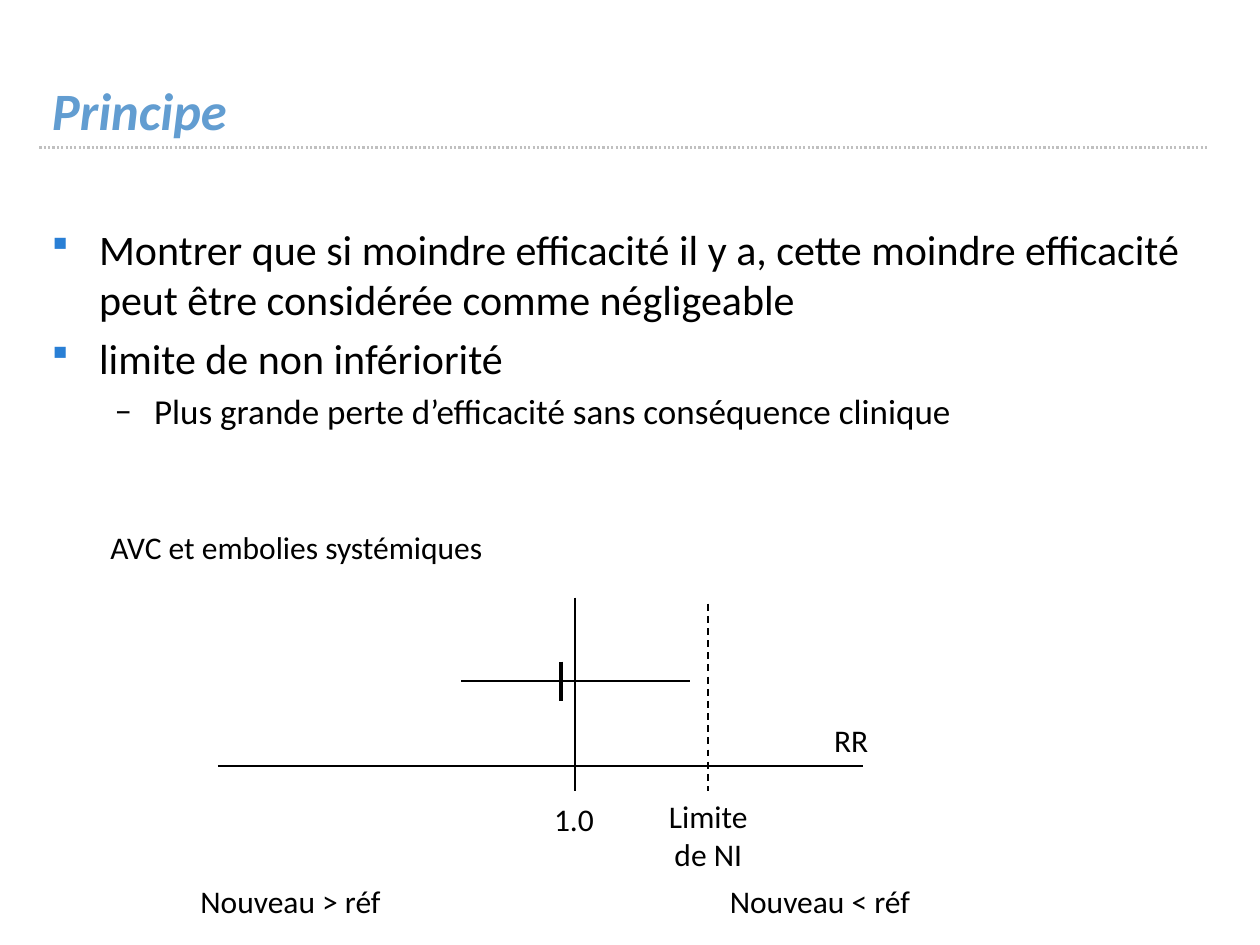
from dataclasses import dataclass

from lxml import etree
from pptx import Presentation
from pptx.dml.color import RGBColor
from pptx.enum import dml, shapes, text
from pptx.oxml import ns
from pptx.util import Pt


@dataclass(frozen=True)
class Theme:
    font: str = "Calibri"
    title_color: str = "629DD1"
    ink: str = "000000"
    rule: str = "C0C0C0"
    bullet: str = "297FD5"
    title_size: int = 30
    body_size: int = 24
    sub_size: int = 20
    label_size: int = 18


class SlideBuilder:
    def __init__(self, presentation, theme):
        self.theme = theme
        self.slide = presentation.slides.add_slide(presentation.slide_layouts[5])

    def format_runs(self, paragraph, size, color, bold=False, italic=False):
        for run in paragraph.runs:
            font = run.font
            font.name, font.size = self.theme.font, Pt(size)
            font.bold, font.italic = bold, italic
            font.color.rgb = RGBColor.from_string(color)

    def title(self, words, left, top, width, height):
        shape = self.slide.shapes.title
        shape.left, shape.top = Pt(left), Pt(top)
        shape.width, shape.height = Pt(width), Pt(height)
        frame = shape.text_frame
        frame.text = words
        frame.auto_size = text.MSO_AUTO_SIZE.NONE
        frame.vertical_anchor = text.MSO_ANCHOR.BOTTOM
        paragraph = frame.paragraphs[0]
        paragraph.alignment = text.PP_ALIGN.LEFT
        self.format_runs(paragraph, self.theme.title_size, self.theme.title_color, True, True)

    def line(self, start, end, width=1, color=None, dash=None):
        points = [Pt(value) for value in (*start, *end)]
        connector = self.slide.shapes.add_connector(shapes.MSO_CONNECTOR.STRAIGHT, *points)
        connector.line.color.rgb = RGBColor.from_string(color or self.theme.ink)
        connector.line.width = Pt(width)
        if dash is not None:
            connector.line.dash_style = dash
        etree.SubElement(connector._element.spPr, ns.qn("a:effectLst"))

    def label(self, words, left, top, width, height=29, centered=False):
        shape = self.slide.shapes.add_textbox(Pt(left), Pt(top), Pt(width), Pt(height))
        frame = shape.text_frame
        frame.text = words
        frame.word_wrap = centered
        frame.auto_size = text.MSO_AUTO_SIZE.SHAPE_TO_FIT_TEXT
        paragraph = frame.paragraphs[0]
        paragraph.alignment = text.PP_ALIGN.CENTER if centered else text.PP_ALIGN.LEFT
        self.format_runs(paragraph, self.theme.label_size, self.theme.ink)

    def bullet(self, paragraph, level):
        properties = paragraph._p.get_or_add_pPr()
        margin, indent = ((27, -27), (58.5, -22.5))[level]
        properties.set("marL", str(Pt(margin)))
        properties.set("indent", str(Pt(indent)))
        if level == 0:
            color = etree.SubElement(properties, ns.qn("a:buClr"))
            etree.SubElement(color, ns.qn("a:srgbClr"), val=self.theme.bullet)
            etree.SubElement(properties, ns.qn("a:buSzPct"), val="90000")
        font, character = (("Wingdings", "§"), (self.theme.font, "–"))[level]
        etree.SubElement(properties, ns.qn("a:buFont"), typeface=font)
        etree.SubElement(properties, ns.qn("a:buChar"), char=character)

    def bullets(self, items, left, top, width, height):
        shape = self.slide.shapes.add_textbox(Pt(left), Pt(top), Pt(width), Pt(height))
        frame = shape.text_frame
        frame.word_wrap = True
        frame.text = "\n".join(words for level, words in items)
        for paragraph, (level, words) in zip(frame.paragraphs, items):
            size = (self.theme.body_size, self.theme.sub_size)[level]
            paragraph.level = level
            paragraph.space_before = Pt(size * 0.2)
            self.bullet(paragraph, level)
            self.format_runs(paragraph, size, self.theme.ink)


def main():
    presentation = Presentation()
    presentation.slide_width, presentation.slide_height = Pt(720), Pt(540)
    theme = Theme()
    builder = SlideBuilder(presentation, theme)

    left, width, rule_y = 22.5, 667.5, 84.25
    builder.line((left, rule_y), (left + width, rule_y), 1.25, theme.rule,
                 dml.MSO_LINE.ROUND_DOT)
    builder.title("Principe", left, 18, width, 66.25)
    builder.bullets([
        (0, "Montrer que si moindre efficacité il y a, cette moindre efficacité "
            "peut être considérée comme négligeable"),
        (0, "limite de non infériorité"),
        (1, "Plus grande perte d’efficacité sans conséquence clinique"),
    ], left, 124, width, 150)

    axis_y, axis_bottom, interval_y = 437.75, 452, 389.25
    unity_x, limit_x, estimate_x = 328.5, 404.75, 320.5
    builder.line((124.5, axis_y), (493, axis_y))
    builder.line((unity_x, 341.5), (unity_x, axis_bottom))
    builder.line((limit_x, 345), (limit_x, axis_bottom), dash=dml.MSO_LINE.DASH)
    builder.line((263.5, interval_y), (394.5, interval_y))
    builder.line((estimate_x, interval_y - 11.25), (estimate_x, interval_y + 11.25), 2.5)

    builder.label("AVC et embolies systémiques", 56, 298, 229.5)
    builder.label("RR", 469.5, 408.5, 34.5)
    builder.label("1.0", 309.5, 453.75, 37.5)
    builder.label("Limite de NI", 373.5, 452, 62.5, 51, centered=True)
    for words, label_left in (("Nouveau > réf", 107.5), ("Nouveau < réf", 410)):
        builder.label(words, label_left, 500.5, 118.5)

    presentation.save("out.pptx")


if __name__ == "__main__":
    main()
